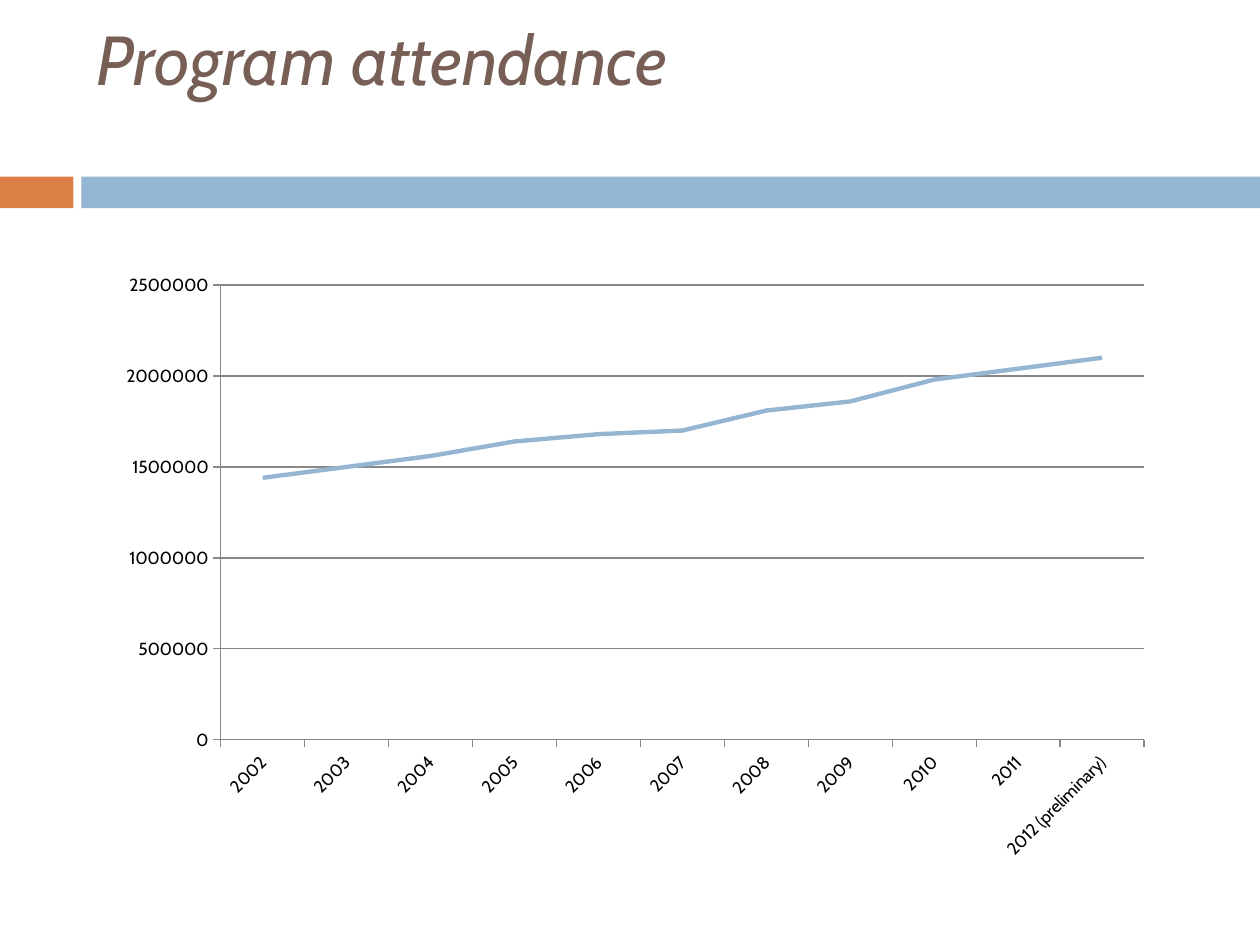
from dataclasses import dataclass

from pptx import Presentation
from pptx.chart.data import CategoryChartData
from pptx.dml.color import RGBColor
from pptx.enum.chart import XL_CHART_TYPE, XL_MARKER_STYLE, XL_TICK_MARK
from pptx.enum.shapes import MSO_SHAPE
from pptx.enum.text import MSO_ANCHOR, PP_ALIGN
from pptx.util import Cm, Pt


@dataclass(frozen=True)
class Theme:
    font: str = "Cabin"
    brown: RGBColor = RGBColor(0x77, 0x5F, 0x55)
    orange: RGBColor = RGBColor(0xDD, 0x80, 0x47)
    blue: RGBColor = RGBColor(0x94, 0xB6, 0xD2)
    grey: RGBColor = RGBColor(0x88, 0x88, 0x88)
    black: RGBColor = RGBColor(0, 0, 0)
    title_size: Pt = Pt(39.6)
    chart_size: Pt = Pt(10)


theme = Theme()

prs = Presentation()
prs.slide_width, prs.slide_height = Cm(25.4), Cm(19.05)
s = prs.slides.add_slide(prs.slide_layouts[5])

# Two-colour band under the title, kept on the slide master
master_tree = prs.slide_master.shapes._spTree
for left, width, color in ((0, 1.48, theme.orange), (1.64, 23.76, theme.blue)):
    sp = s.shapes.add_shape(MSO_SHAPE.RECTANGLE, Cm(left), Cm(3.56), Cm(width), Cm(0.64))
    sp.shadow.inherit = False
    sp.fill.solid()
    sp.fill.fore_color.rgb = color
    sp.line.fill.background()
    master_tree.append(sp._element)

# Title, raised within its box by the bottom inset
title = s.shapes.title
title.left, title.top, title.width, title.height = Cm(1.7), Cm(0.64), Cm(22.65), Cm(2.74)
tf = title.text_frame
tf.text = "Program attendance"
tf.word_wrap = True
tf.vertical_anchor = MSO_ANCHOR.MIDDLE
tf.margin_top, tf.margin_bottom = Cm(0), Cm(1.7)
p = tf.paragraphs[0]
p.alignment = PP_ALIGN.LEFT
p.font.name = theme.font
p.font.size = theme.title_size
p.font.italic = True
p.font.color.rgb = theme.brown

# Attendance by year
attendance = {
    "2002": 1440000,
    "2003": 1500000,
    "2004": 1560000,
    "2005": 1640000,
    "2006": 1680000,
    "2007": 1700000,
    "2008": 1810000,
    "2009": 1860000,
    "2010": 1980000,
    "2011": 2040000,
    "2012 (preliminary)": 2100000,
}
data = CategoryChartData(number_format="General")
data.categories = list(attendance)
data.add_series("Series 1", list(attendance.values()))
chart = s.shapes.add_chart(
    XL_CHART_TYPE.LINE, Cm(2.12), Cm(5.29), Cm(21.37), Cm(12.28), data
).chart
chart.has_legend = False
chart.has_title = False
chart.font.name = theme.font
chart.font.size = theme.chart_size
chart.font.color.rgb = theme.black
chart.plots[0].vary_by_categories = False

# Line
series = chart.plots[0].series[0]
series.smooth = False
series.marker.style = XL_MARKER_STYLE.NONE
series.format.line.color.rgb = theme.blue
series.format.line.width = Pt(2.5)

# Axes and gridlines
years, visits = chart.category_axis, chart.value_axis
visits.minimum_scale, visits.maximum_scale, visits.major_unit = 0, 2500000, 500000
visits.has_major_gridlines = True
for axis in (years, visits):
    axis.major_tick_mark = XL_TICK_MARK.OUTSIDE
    axis.tick_labels.font.size = theme.chart_size
for line in (years.format.line, visits.format.line, visits.major_gridlines.format.line):
    line.color.rgb = theme.grey
    line.width = Pt(0.75)

# Slanted year labels
years._element.get_or_add_txPr().bodyPr.set("rot", "-2700000")

prs.save("out.pptx")
